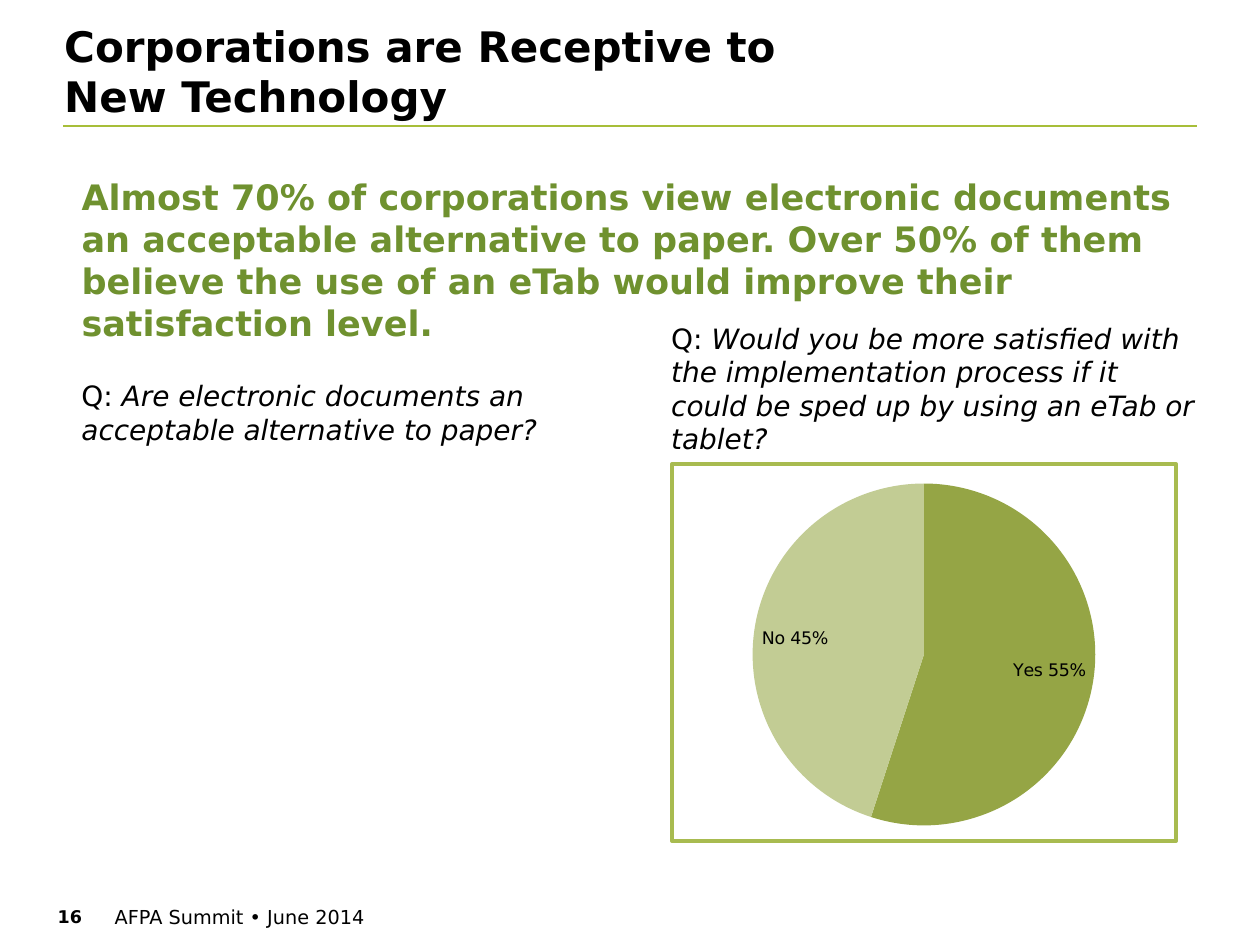
from lxml.etree import SubElement
from pptx import Presentation
from pptx.chart.data import CategoryChartData
from pptx.dml.color import RGBColor
from pptx.enum.chart import XL_CHART_TYPE, XL_LABEL_POSITION
from pptx.enum.shapes import MSO_CONNECTOR
from pptx.enum.text import MSO_ANCHOR, PP_ALIGN
from pptx.oxml import parse_xml
from pptx.oxml.ns import nsdecls, qn
from pptx.util import Pt

FONT = "DejaVu Sans"
BLACK, GREEN = "000000", "6F912F"
QUERY_W, QUERY_H = 316, 327


def color(code):
    return RGBColor.from_string(code)


def write(shape, runs, size, ink=BLACK, bold=False, anchor=MSO_ANCHOR.TOP,
          side=7.2):
    """Fill a shape with one paragraph of (text, italic) runs; \\n breaks a line."""
    frame = shape.text_frame
    frame.word_wrap = True
    frame.vertical_anchor = anchor
    frame.margin_left = frame.margin_right = Pt(side)
    frame.margin_top = frame.margin_bottom = Pt(3.6)
    para = frame.paragraphs[0]
    para.alignment = PP_ALIGN.LEFT
    for text, italic in runs:
        for i, line in enumerate(text.split("\n")):
            if i:
                para.add_line_break()
            run = para.add_run()
            run.text = line
            font = run.font
            font.name, font.size = FONT, Pt(size)
            font.bold, font.italic = bold, italic
            font.color.rgb = color(ink)


def place(shape, box):
    shape.left, shape.top, shape.width, shape.height = map(Pt, box)


def label(slide, box, runs, size, **style):
    shape = slide.shapes.add_textbox(*map(Pt, box))
    write(shape, runs, size, **style)


def header(slide, box):
    """Place the title and the rule under it."""
    title = slide.shapes.title
    place(title, box)
    write(title, [("Corporations are Receptive to \nNew Technology", False)],
          24, bold=True, anchor=MSO_ANCHOR.BOTTOM)
    rule = slide.shapes.add_connector(
        MSO_CONNECTOR.STRAIGHT, Pt(36), Pt(72), Pt(684), Pt(72))
    rule.line.color.rgb = color("A7BE39")
    rule.line.width = Pt(0.75)
    SubElement(rule.element.spPr, qn("a:effectLst"))


def query(slide, left, top, text):
    label(slide, (left, top, QUERY_W, QUERY_H),
          [("Q: ", False), (text, True)], 16)


def pie(slide, box):
    data = CategoryChartData(number_format="0%")
    data.categories = ["Yes", "No"]
    data.add_series("Series 1", [0.55, 0.45])
    chart = slide.shapes.add_chart(
        XL_CHART_TYPE.PIE, *map(Pt, box), data).chart
    chart.has_legend = chart.has_title = False
    chart.font.name, chart.font.size = FONT, Pt(10)
    chart.font.color.rgb = color(BLACK)

    plot = chart.plots[0]
    plot.vary_by_categories = True
    for i, fill in enumerate(["95A545", "C2CC94"]):
        slot = plot.series[0].points[i].format
        slot.fill.solid()
        slot.fill.fore_color.rgb = color(fill)
        slot.line.fill.background()

    plot.has_data_labels = True
    tags = plot.data_labels
    tags.show_category_name = tags.show_value = True
    tags.show_percentage = False
    tags.number_format, tags.number_format_is_linked = "0%", False
    tags.position = XL_LABEL_POSITION.INSIDE_END

    root = chart.element
    gap = parse_xml(f'<c:separator {nsdecls("c")}> </c:separator>')
    root.find(".//" + qn("c:dLbls")).find(qn("c:showBubbleSize")).addnext(gap)
    area = root.find(".//" + qn("c:plotArea"))
    for old in area.findall(qn("c:layout")):
        area.remove(old)
    spots = "".join(f'<c:{key} val="{val}"/>' for key, val in [
        ("layoutTarget", "inner"), ("xMode", "edge"), ("yMode", "edge"),
        ("x", 0.16), ("y", 0.05), ("w", 0.68), ("h", 0.91)])
    area.insert(0, parse_xml(
        f'<c:layout {nsdecls("c")}><c:manualLayout>{spots}'
        '</c:manualLayout></c:layout>'))
    root.find(qn("c:chart")).addnext(parse_xml(
        f'<c:spPr {nsdecls("c", "a")}>'
        '<a:solidFill><a:srgbClr val="FFFFFF"/></a:solidFill>'
        f'<a:ln w="{Pt(2)}"><a:solidFill><a:srgbClr val="A8BB50"/>'
        '</a:solidFill></a:ln></c:spPr>'))


def footer(slide, top):
    label(slide, (33, top, 31, 22), [("16", False)], 10, bold=True, side=0)
    label(slide, (65.5, top, 523, 22),
          [("AFPA Summit • June 2014", False)], 11, side=0)


def main():
    deck = Presentation()
    deck.slide_width, deck.slide_height = Pt(720), Pt(540)
    slide = deck.slides.add_slide(deck.slide_layouts[5])
    header(slide, (29.5, 0, 648, 72.7))
    query(slide, 39.5, 213,
          "Are electronic documents an acceptable alternative to paper?")
    query(slide, 376.5, 180,
          "Would you be more satisfied with the implementation process if it "
          "could be sped up by using an eTab or tablet?")
    pie(slide, (383, 264.2, 290, 217.5))
    footer(slide, 514)
    label(slide, (39.5, 96.5, 646.5, 128),
          [("Almost 70% of corporations view electronic documents an "
            "acceptable alternative to paper. Over 50% of them believe the "
            "use of an eTab would improve their satisfaction level.", False)],
          20, ink=GREEN, bold=True)
    deck.save("out.pptx")


if __name__ == "__main__":
    main()
